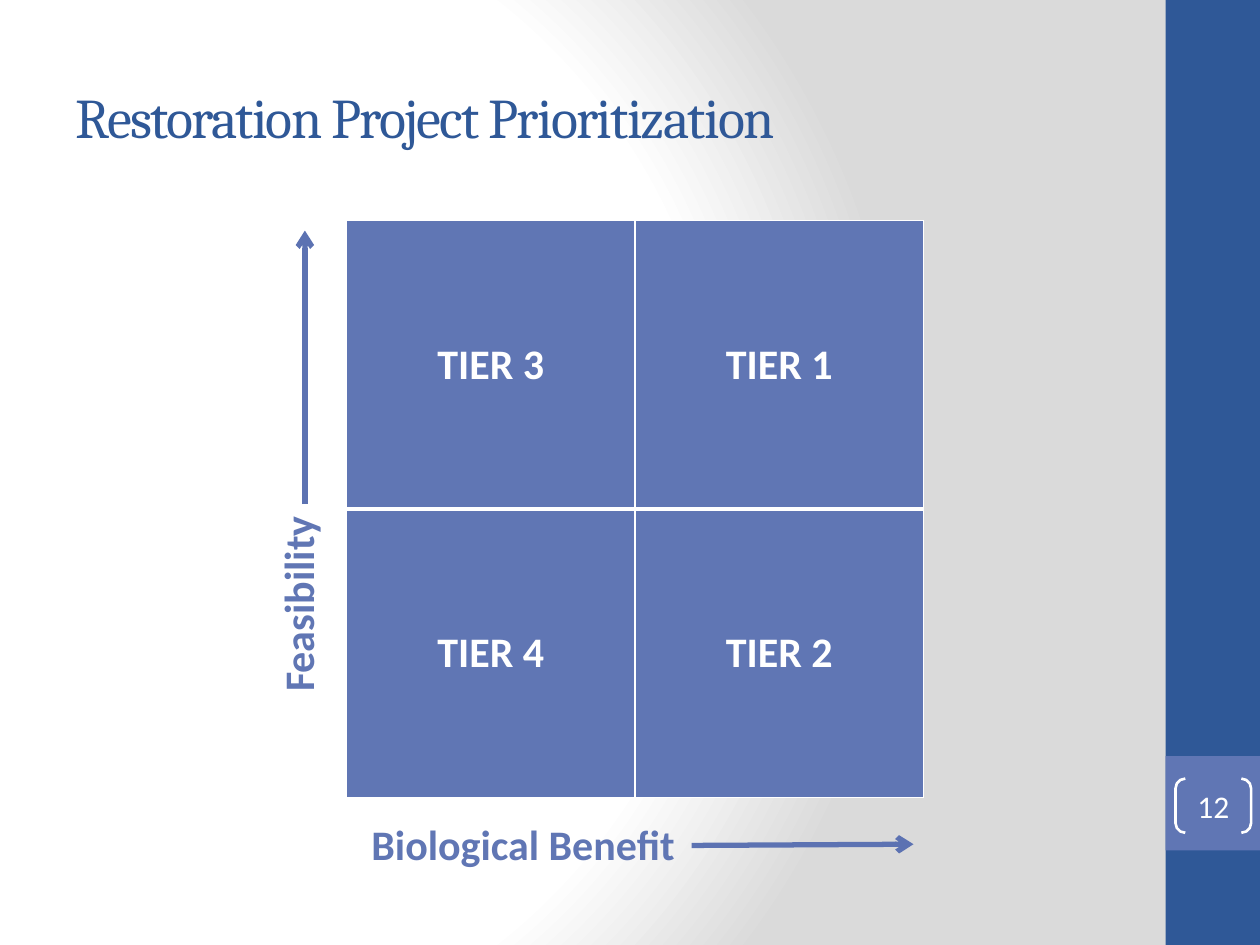
from dataclasses import dataclass

import pptx
import pptx.dml.color
import pptx.enum.shapes
import pptx.enum.text
import pptx.oxml
import pptx.oxml.ns
import pptx.util
from lxml import etree

Inches = pptx.util.Inches
Pt = pptx.util.Pt
RGBColor = pptx.dml.color.RGBColor
Align = pptx.enum.text.PP_ALIGN
Anchor = pptx.enum.text.MSO_ANCHOR
Shape = pptx.enum.shapes.MSO_SHAPE
qn = pptx.oxml.ns.qn

NAVY = RGBColor(0x2F, 0x58, 0x97)
PERIWINKLE = RGBColor(0x60, 0x76, 0xB4)
ARROW_BLUE = RGBColor(0x5C, 0x72, 0xB2)
WHITE = RGBColor(0xFF, 0xFF, 0xFF)

TIERS = [["TIER 3", "TIER 1"], ["TIER 4", "TIER 2"]]
CELL_SIZE = 2.29

BACKGROUND = f"""<p:bg {pptx.oxml.ns.nsdecls("p", "a")}><p:bgPr>
<a:gradFill rotWithShape="1"><a:gsLst>
<a:gs pos="0"><a:srgbClr val="FFFFFF"/></a:gs>
<a:gs pos="75000"><a:srgbClr val="FFFFFF"/></a:gs>
<a:gs pos="100000"><a:srgbClr val="DADADA"/></a:gs></a:gsLst>
<a:path path="circle"><a:fillToRect l="20000" t="50000" r="100000" b="50000"/></a:path>
</a:gradFill><a:effectLst/></p:bgPr></p:bg>"""


@dataclass
class Box:
    left: float
    top: float
    width: float
    height: float

    def lengths(self) -> list:
        return [Inches(v) for v in (self.left, self.top, self.width, self.height)]


@dataclass
class Axis:
    label: str
    box: Box
    start: tuple[float, float]
    end: tuple[float, float]
    vertical: bool = False


BANDS = [
    (Box(9.25, 0, 0.75, 7.5), NAVY),
    (Box(9.25, 6, 0.75, 0.75), PERIWINKLE),
]
AXES = [
    Axis("Biological Benefit", Box(2.85, 6.45, 2.64, 0.5), (5.49, 6.71), (7.25, 6.7)),
    Axis("Feasibility", Box(2.11, 4.08, 0.61, 1.51), (2.42, 4), (2.42, 1.83), True),
]


def add_run(paragraph, text: str, size: int, color: RGBColor,
            font_name: str = "Calibri", bold: bool = False):
    run = paragraph.add_run()
    run.text = text
    run.font.size = Pt(size)
    run.font.name = font_name
    run.font.bold = bold
    run.font.color.rgb = color
    return run


def add_band(slide, box: Box, color: RGBColor) -> None:
    band = slide.shapes.add_shape(Shape.RECTANGLE, *box.lengths())
    band.shadow.inherit = False
    band.fill.solid()
    band.fill.fore_color.rgb = color
    band.line.fill.background()


def add_title(slide, text: str) -> None:
    title = slide.shapes.title
    title.left, title.top, title.width, title.height = Box(0.5, 0.3, 8.33, 1.25).lengths()
    title.text_frame.vertical_anchor = Anchor.MIDDLE
    paragraph = title.text_frame.paragraphs[0]
    paragraph.alignment = Align.LEFT
    run = add_run(paragraph, text, 32, NAVY, "Cambria")
    run.font._element.set("spc", "-100")


def add_page_number(slide, number: str) -> None:
    bracket = slide.shapes.add_shape(Shape.DOUBLE_BRACKET, *Box(9.33, 6.18, 0.6, 0.43).lengths())
    bracket.adjustments[0] = 0.18
    bracket.shadow.inherit = False
    bracket.fill.background()
    bracket.line.color.rgb = WHITE
    bracket.line.width = Pt(1.5)
    frame = bracket.text_frame
    frame.margin_left = frame.margin_right = frame.margin_top = frame.margin_bottom = 0
    frame.vertical_anchor = Anchor.MIDDLE
    frame.paragraphs[0].alignment = Align.CENTER
    add_run(frame.paragraphs[0], number, 18, WHITE)


def set_borders(cell, top: int, bottom: int) -> None:
    """Draw white cell borders; the side borders are 1 point wide."""
    properties = cell._tc.get_or_add_tcPr()
    widths = {"lnL": 1, "lnR": 1, "lnT": top, "lnB": bottom}
    for index, (edge, width) in enumerate(widths.items()):
        line = etree.Element(qn(f"a:{edge}"), w=str(Pt(width)))
        fill = etree.SubElement(line, qn("a:solidFill"))
        etree.SubElement(fill, qn("a:srgbClr"), val=str(WHITE))
        properties.insert(index, line)


def add_tier_table(slide) -> None:
    box = Box(2.75, 1.75, 2 * CELL_SIZE, 2 * CELL_SIZE)
    table = slide.shapes.add_table(2, 2, *box.lengths()).table
    table.first_row = table.horz_banding = False
    for row_index, labels in enumerate(TIERS):
        for column_index, label in enumerate(labels):
            cell = table.cell(row_index, column_index)
            cell.fill.solid()
            cell.fill.fore_color.rgb = PERIWINKLE
            cell.vertical_anchor = Anchor.MIDDLE
            paragraph = cell.text_frame.paragraphs[0]
            paragraph.alignment = Align.CENTER
            add_run(paragraph, label, 24, WHITE, bold=True)
            set_borders(cell, *((1, 3) if row_index == 0 else (3, 1)))


def add_axis(slide, axis: Axis) -> None:
    arrow = slide.shapes.add_connector(
        pptx.enum.shapes.MSO_CONNECTOR.STRAIGHT,
        *(Inches(v) for v in axis.start + axis.end))
    arrow.line.color.rgb = ARROW_BLUE
    arrow.line.width = Pt(3)
    etree.SubElement(arrow.line._get_or_add_ln(), qn("a:tailEnd"), type="arrow")
    etree.SubElement(arrow._element.spPr, qn("a:effectLst"))

    frame = slide.shapes.add_textbox(*axis.box.lengths()).text_frame
    frame.word_wrap = False
    frame.auto_size = pptx.enum.text.MSO_AUTO_SIZE.SHAPE_TO_FIT_TEXT
    if axis.vertical:
        frame._txBody.bodyPr.set("vert", "vert270")
    add_run(frame.paragraphs[0], axis.label, 24, PERIWINKLE, bold=True)


def main() -> None:
    presentation = pptx.Presentation()
    presentation.slide_width = Inches(10)
    presentation.slide_height = Inches(7.5)
    slide = presentation.slides.add_slide(presentation.slide_layouts[5])
    slide.element.cSld.insert(0, pptx.oxml.parse_xml(BACKGROUND))
    for box, color in BANDS:
        add_band(slide, box, color)
    add_title(slide, "Restoration Project Prioritization")
    add_page_number(slide, "12")
    add_tier_table(slide)
    for axis in AXES:
        add_axis(slide, axis)
    presentation.save("out.pptx")


if __name__ == "__main__":
    main()
